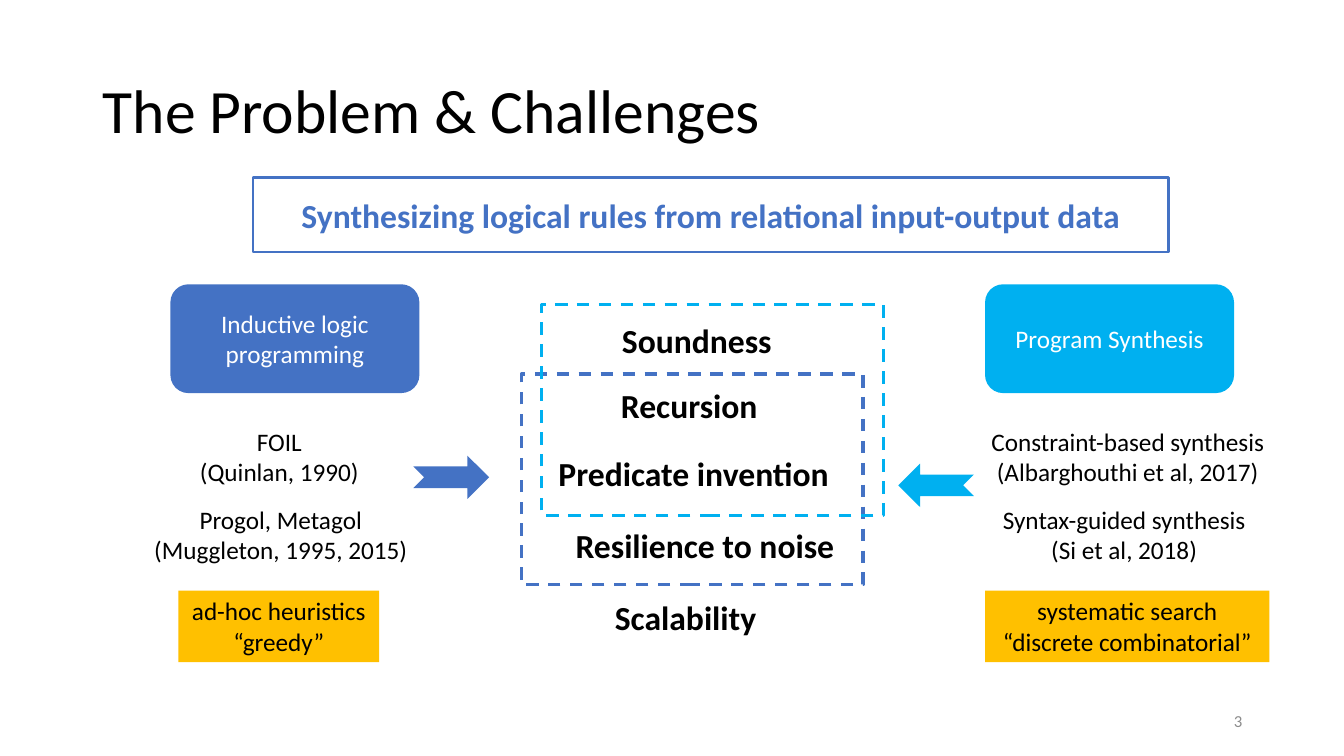
from pptx import Presentation
from pptx.dml.color import RGBColor
from pptx.enum.dml import MSO_LINE
from pptx.enum.shapes import MSO_SHAPE
from pptx.enum.text import MSO_ANCHOR, MSO_AUTO_SIZE, PP_ALIGN
from pptx.util import Emu, Pt

LEFT, CENTER, RIGHT = PP_ALIGN.LEFT, PP_ALIGN.CENTER, PP_ALIGN.RIGHT
TOP, MIDDLE = MSO_ANCHOR.TOP, MSO_ANCHOR.MIDDLE
RECTANGLE, ROUNDED = MSO_SHAPE.RECTANGLE, MSO_SHAPE.ROUNDED_RECTANGLE
ARROW = MSO_SHAPE.NOTCHED_RIGHT_ARROW
DASH = MSO_LINE.DASH
FIT_SHAPE, NO_FIT = MSO_AUTO_SIZE.SHAPE_TO_FIT_TEXT, MSO_AUTO_SIZE.NONE

EMU_PER_PX = 9144
BLACK, WHITE, GRAY = "000000", "FFFFFF", "8C8C8C"
BLUE, CYAN, AMBER = "4472C4", "00B0F0", "FFC000"


def px(*lengths):
    return [Emu(length * EMU_PER_PX) for length in lengths]


def color(value):
    return RGBColor.from_string(value)


class SlideBuilder:
    font_name = "Calibri"

    def __init__(self, deck):
        self.page = deck.slides.add_slide(deck.slide_layouts[5])

    def set_text(self, box, text, size, ink=BLACK, bold=False, align=CENTER,
                 anchor=MIDDLE, wrap=True):
        frame = box.text_frame
        frame.text = text
        frame.word_wrap = wrap
        frame.auto_size = NO_FIT if wrap else FIT_SHAPE
        frame.vertical_anchor = anchor
        for para in frame.paragraphs:
            para.alignment = align
            for span in para.runs:
                span.font.name = self.font_name
                span.font.size = Pt(size)
                span.font.bold = bold
                span.font.color.rgb = color(ink)

    def title(self, place, text):
        box = self.page.shapes.title
        box.left, box.top, box.width, box.height = px(*place)
        self.set_text(box, text, 44, align=LEFT)
        box.text_frame.paragraphs[0].line_spacing = 0.9

    def label(self, place, text, size=18, **style):
        box = self.page.shapes.add_textbox(*px(*place))
        self.set_text(box, text, size, **style)

    def shape(self, kind, place, fill=None, line=None, weight=2, dash=None, rotation=0):
        box = self.page.shapes.add_shape(kind, *px(*place))
        box.shadow.inherit = False
        box.rotation = rotation
        if fill:
            box.fill.solid()
            box.fill.fore_color.rgb = color(fill)
        else:
            box.fill.background()
        if line:
            box.line.color.rgb = color(line)
            box.line.width = Pt(weight)
            box.line.dash_style = dash
        else:
            box.line.fill.background()
        return box


def main():
    deck = Presentation()
    deck.slide_width, deck.slide_height = px(1333, 750)
    slide = SlideBuilder(deck)

    slide.title((92, 40, 796, 145), "The Problem & Challenges")
    slide.label((1092, 695, 150, 40), "3", 12, ink=GRAY, align=RIGHT)

    challenges = [
        ("Soundness", 607, 312, 176),
        ("Recursion", 606, 377, 164),
        ("Predicate invention", 544, 444, 302),
        ("Resilience to noise", 561, 516, 288),
        ("Scalability", 600, 587, 168),
    ]
    for text, left, top, width in challenges:
        slide.label((left, top, width, 50), text, 24, bold=True, align=LEFT,
                    anchor=TOP, wrap=False)

    related_work = [
        ("FOIL\n(Quinlan, 1990)", 186, 418, 182),
        ("Progol, Metagol\n(Muggleton, 1995, 2015)", 141, 495, 275),
        ("Constraint-based synthesis\v(Albarghouthi et al, 2017)", 966, 418, 305),
        ("Syntax-guided synthesis\v(Si et al, 2018)", 977, 495, 276),
    ]
    for text, left, top, width in related_work:
        slide.label((left, top, width, 71), text, anchor=TOP, wrap=False)

    traits = [
        ("ad-hoc heuristics\n“greedy”", 177, 199),
        ("systematic search\n“discrete combinatorial”", 977, 282),
    ]
    for text, left, width in traits:
        trait = slide.shape(RECTANGLE, (left, 586, width, 71), AMBER)
        slide.set_text(trait, text, 18, anchor=TOP, wrap=False)

    problem = slide.shape(RECTANGLE, (251, 176, 908, 74), WHITE, BLUE)
    slide.set_text(problem, "Synthesizing logical rules from relational input-output data",
                   24, ink=BLUE, bold=True)

    fields = [
        ("Inductive logic programming", BLUE, 169, (517, 371), (410, 452), 0),
        ("Program Synthesis", CYAN, 977, (537, 302), (891, 460), 180),
    ]
    for text, tint, left, frame_corner, arrow_corner, rotation in fields:
        field = slide.shape(ROUNDED, (left, 282, 247, 108), tint)
        slide.set_text(field, text, 18, ink=WHITE)
        slide.shape(RECTANGLE, (*frame_corner, 339, 209), line=tint, weight=2.25, dash=DASH)
        slide.shape(ARROW, (*arrow_corner, 75, 43), tint, rotation=rotation)

    deck.save("out.pptx")


if __name__ == "__main__":
    main()
